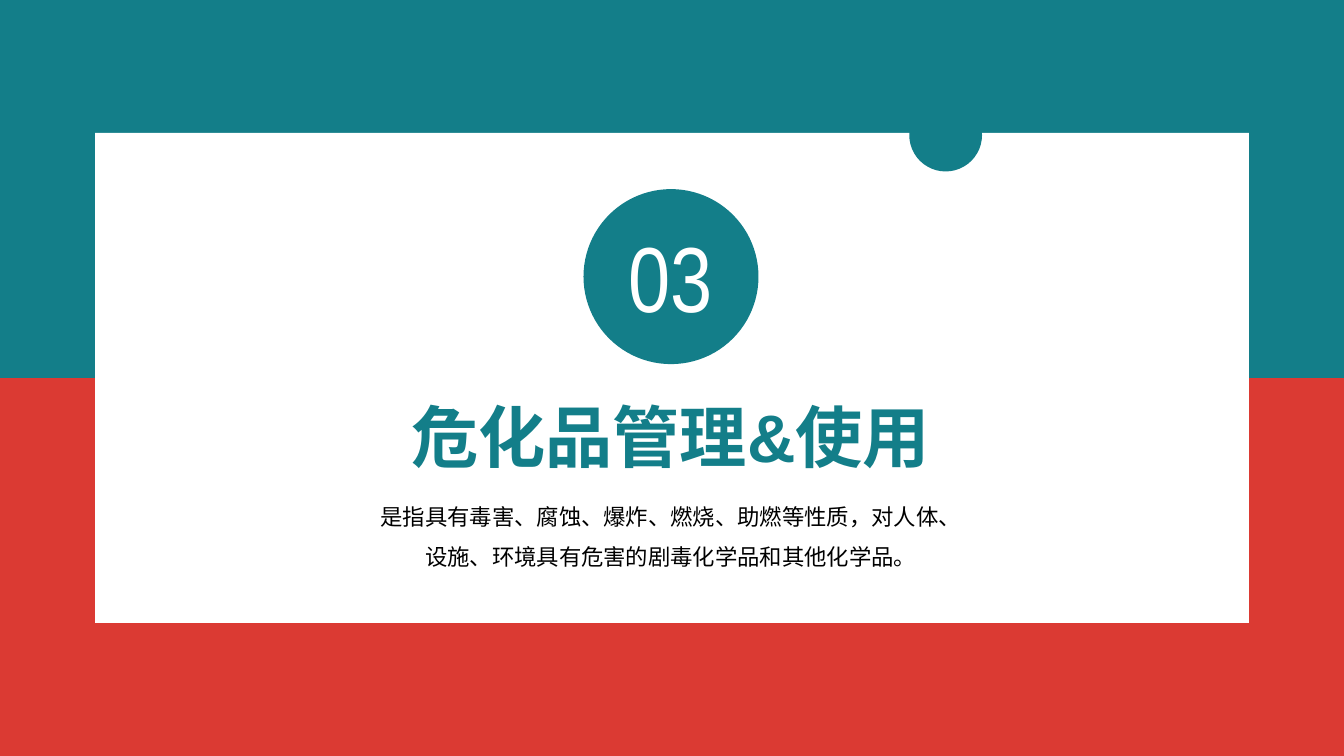
from dataclasses import dataclass

from pptx import Presentation
from pptx.dml.color import RGBColor
from pptx.enum.shapes import MSO_SHAPE
from pptx.enum.text import MSO_ANCHOR, MSO_AUTO_SIZE, PP_ALIGN
from pptx.util import Pt

WIDTH, HEIGHT = 960, 540


@dataclass(frozen=True)
class Theme:
    teal: RGBColor = RGBColor(0x13, 0x7E, 0x89)
    red: RGBColor = RGBColor(0xDB, 0x3A, 0x33)
    white: RGBColor = RGBColor(0xFF, 0xFF, 0xFF)
    black: RGBColor = RGBColor(0, 0, 0)
    number_size: int = 66
    title_size: int = 48
    body_size: int = 16
    text_font: str = "Arial"
    number_font: str = "Arial Narrow"


def set_attributes(target, values):
    for name, value in values.items():
        setattr(target, name, value)


class SectionSlide:
    def __init__(self, slide, theme):
        self.slide = slide
        self.theme = theme

    def add_block(self, kind, left, top, width, height, color):
        shape = self.slide.shapes.add_shape(kind, Pt(left), Pt(top), Pt(width), Pt(height))
        shape.shadow.inherit = False
        shape.fill.solid()
        shape.fill.fore_color.rgb = color
        shape.line.fill.background()

    def add_circle(self, center_x, center_y, diameter):
        self.add_block(MSO_SHAPE.OVAL, center_x - diameter / 2, center_y - diameter / 2,
                       diameter, diameter, self.theme.teal)

    def format_text(self, shape, text, size, color, font=None, bold=False, spacing=1.0):
        frame = shape.text_frame
        frame.text = text
        set_attributes(frame, {"word_wrap": True, "auto_size": MSO_AUTO_SIZE.NONE,
                               "vertical_anchor": MSO_ANCHOR.TOP})
        paragraph = frame.paragraphs[0]
        set_attributes(paragraph, {"alignment": PP_ALIGN.CENTER, "line_spacing": spacing})
        run_font = paragraph.runs[0].font
        set_attributes(run_font, {"name": font or self.theme.text_font,
                                  "size": Pt(size), "bold": bold})
        run_font.color.rgb = color

    def add_text(self, left, top, width, height, text, **style):
        box = self.slide.shapes.add_textbox(Pt(left), Pt(top), Pt(width), Pt(height))
        self.format_text(box, text, **style)

    def add_title(self, left, top, width, height, text, **style):
        title = self.slide.shapes.title
        set_attributes(title, {"left": Pt(left), "top": Pt(top),
                               "width": Pt(width), "height": Pt(height)})
        self.format_text(title, text, **style)
        # Bring the title in front of the panel
        self.slide.shapes.element.append(title.element)


def main():
    presentation = Presentation()
    set_attributes(presentation, {"slide_width": Pt(WIDTH), "slide_height": Pt(HEIGHT)})
    theme = Theme()
    section = SectionSlide(presentation.slides.add_slide(presentation.slide_layouts[5]), theme)

    # Two-colour background
    half = HEIGHT / 2
    for top, color in ((half, theme.red), (0, theme.teal)):
        section.add_block(MSO_SHAPE.RECTANGLE, 0, top, WIDTH, half, color)

    # White panel with its notch
    margin_x, margin_y = 68, 95
    section.add_block(MSO_SHAPE.RECTANGLE, margin_x, margin_y,
                      WIDTH - 2 * margin_x, HEIGHT - 2 * margin_y, theme.white)
    section.add_circle(675.5, 96.5, 52)

    # Section number
    section.add_circle(479.3, 197.6, 125)
    section.add_text(432.7, 154, 92, 87, "03", size=theme.number_size,
                     color=theme.white, font=theme.number_font)

    # Title and description
    section.add_title(229, 278.6, 500, 65.5, "危化品管理&使用",
                      size=theme.title_size, color=theme.teal, bold=True)
    section.add_text(260, 346.3, 438.5, 62,
                     "是指具有毒害、腐蚀、爆炸、燃烧、助燃等性质，对人体、设施、环境具有危害的剧毒化学品和其他化学品。",
                     size=theme.body_size, color=theme.black, spacing=1.5)

    presentation.save("out.pptx")


if __name__ == "__main__":
    main()
